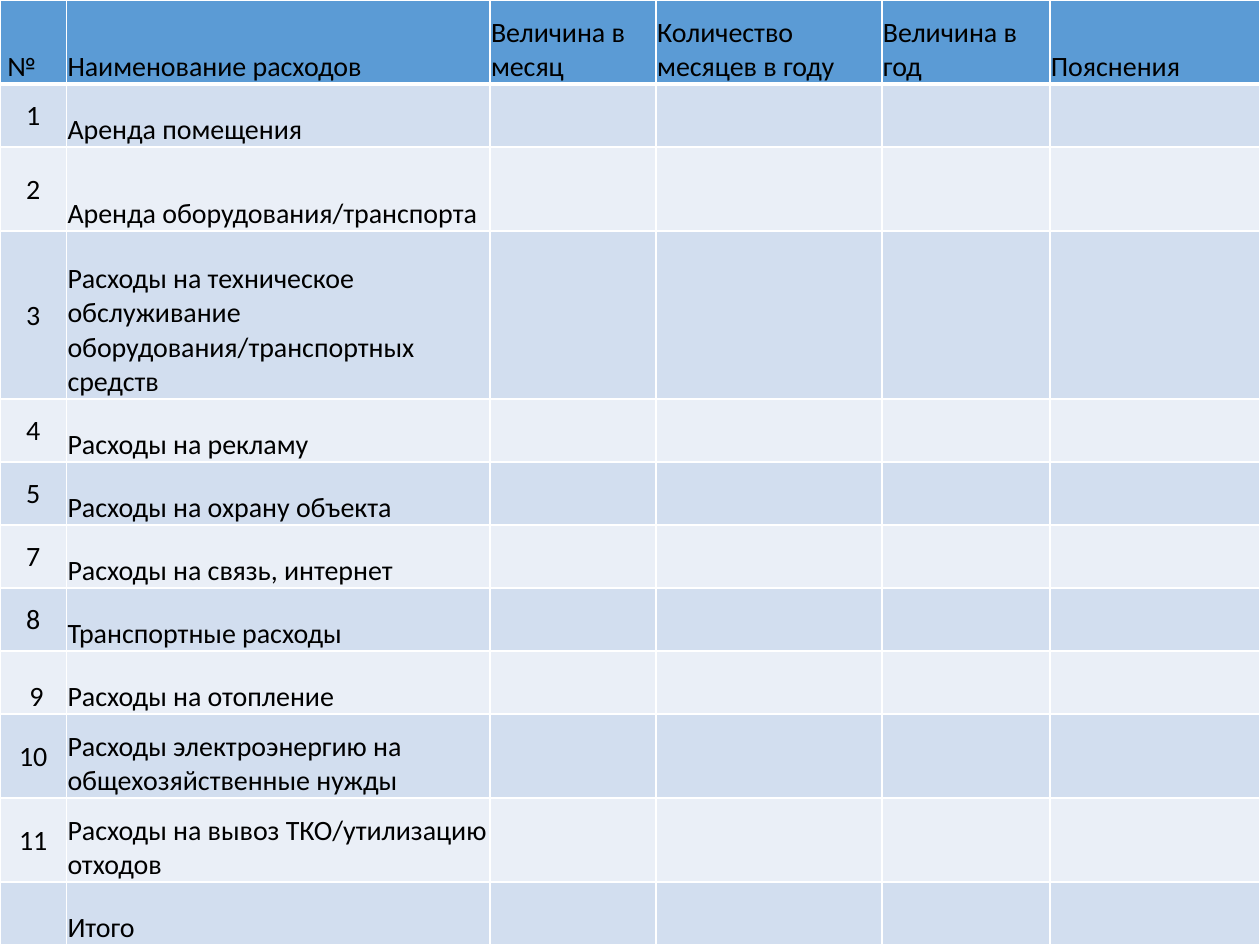
from typing import NamedTuple

from lxml.etree import SubElement
from pptx import Presentation
from pptx.dml.color import RGBColor
from pptx.enum.text import MSO_ANCHOR as Anchor, PP_ALIGN as Align
from pptx.oxml.ns import qn
from pptx.util import Pt

HEADER_FILL, BAND_FILLS = "5B9BD5", ("D2DEEF", "EAEFF7")
BORDER, TEXT = "FFFFFF", "000000"
COL_WIDTHS = (38, 242, 95, 129, 96, 120)
HEADER_HEIGHT = 48
HEADERS = (" №", "Наименование расходов", "Величина в месяц",
           "Количество месяцев в году", "Величина в год", "Пояснения")
FONT = {"name": "Calibri", "size": Pt(16), "bold": False}
MARGINS = {"margin_left": Pt(0.6), "margin_top": Pt(0.6),
           "margin_right": Pt(0.6), "margin_bottom": Pt(0)}


class Expense(NamedTuple):
    number: str
    name: str
    height: float = 36
    number_anchor: Anchor = Anchor.MIDDLE


EXPENSES = (
    Expense("1", "Аренда помещения"),
    Expense("2", "Аренда оборудования/транспорта", 48),
    Expense("3", "Расходы на техническое обслуживание "
                 "оборудования/транспортных средств", 96),
    Expense("4", "Расходы на рекламу"),
    Expense("5", "Расходы на охрану объекта"),
    Expense("7", "Расходы на связь, интернет"),
    Expense("8", "Транспортные расходы"),
    Expense(" 9", "Расходы на отопление", number_anchor=Anchor.BOTTOM),
    Expense("10", "Расходы электроэнергию на общехозяйственные нужды", 48),
    Expense("11", "Расходы на вывоз ТКО/утилизацию отходов", 48),
    Expense("", "Итого"),
)


def color(value: str) -> RGBColor:
    return RGBColor.from_string(value)


def apply(target, values: dict) -> None:
    for name, value in values.items():
        setattr(target, name, value)


def style_cell(cell, fill: str, top: float = 1, bottom: float = 1) -> None:
    """Give the cell its borders, then its fill, in schema order."""
    tc_pr = cell._tc.get_or_add_tcPr()
    for side, width in (("L", 1), ("R", 1), ("T", top), ("B", bottom)):
        ln = SubElement(tc_pr, qn(f"a:ln{side}"), w=str(Pt(width)))
        SubElement(SubElement(ln, qn("a:solidFill")), qn("a:srgbClr"), val=BORDER)
    cell.fill.solid()
    cell.fill.fore_color.rgb = color(fill)


def write(cell, text: str, align: Align = Align.LEFT,
          anchor: Anchor = Anchor.BOTTOM) -> None:
    if not text:
        return
    apply(cell, MARGINS | {"vertical_anchor": anchor})
    p = cell.text_frame.paragraphs[0]
    p.alignment = align
    r = p.add_run()
    r.text = text
    apply(r.font, FONT)
    r.font.color.rgb = color(TEXT)


def main() -> None:
    prs = Presentation()
    prs.slide_width, prs.slide_height = Pt(720), Pt(540)
    s = prs.slides.add_slide(prs.slide_layouts[6])
    heights = [HEADER_HEIGHT] + [e.height for e in EXPENSES]
    table = s.shapes.add_table(len(heights), len(COL_WIDTHS), Pt(0), Pt(0),
                               Pt(sum(COL_WIDTHS)), Pt(sum(heights))).table
    for column, width in zip(table.columns, COL_WIDTHS):
        column.width = Pt(width)
    for row, height in zip(table.rows, heights):
        row.height = Pt(height)

    for col, header in enumerate(HEADERS):
        style_cell(table.cell(0, col), HEADER_FILL, bottom=3)
        write(table.cell(0, col), header)
    for i, expense in enumerate(EXPENSES):
        row = i + 1
        for col in range(len(COL_WIDTHS)):
            style_cell(table.cell(row, col), BAND_FILLS[i % 2],
                       top=3 if i == 0 else 1)
        write(table.cell(row, 0), expense.number, Align.CENTER, expense.number_anchor)
        write(table.cell(row, 1), expense.name)
    prs.save("out.pptx")


if __name__ == "__main__":
    main()
